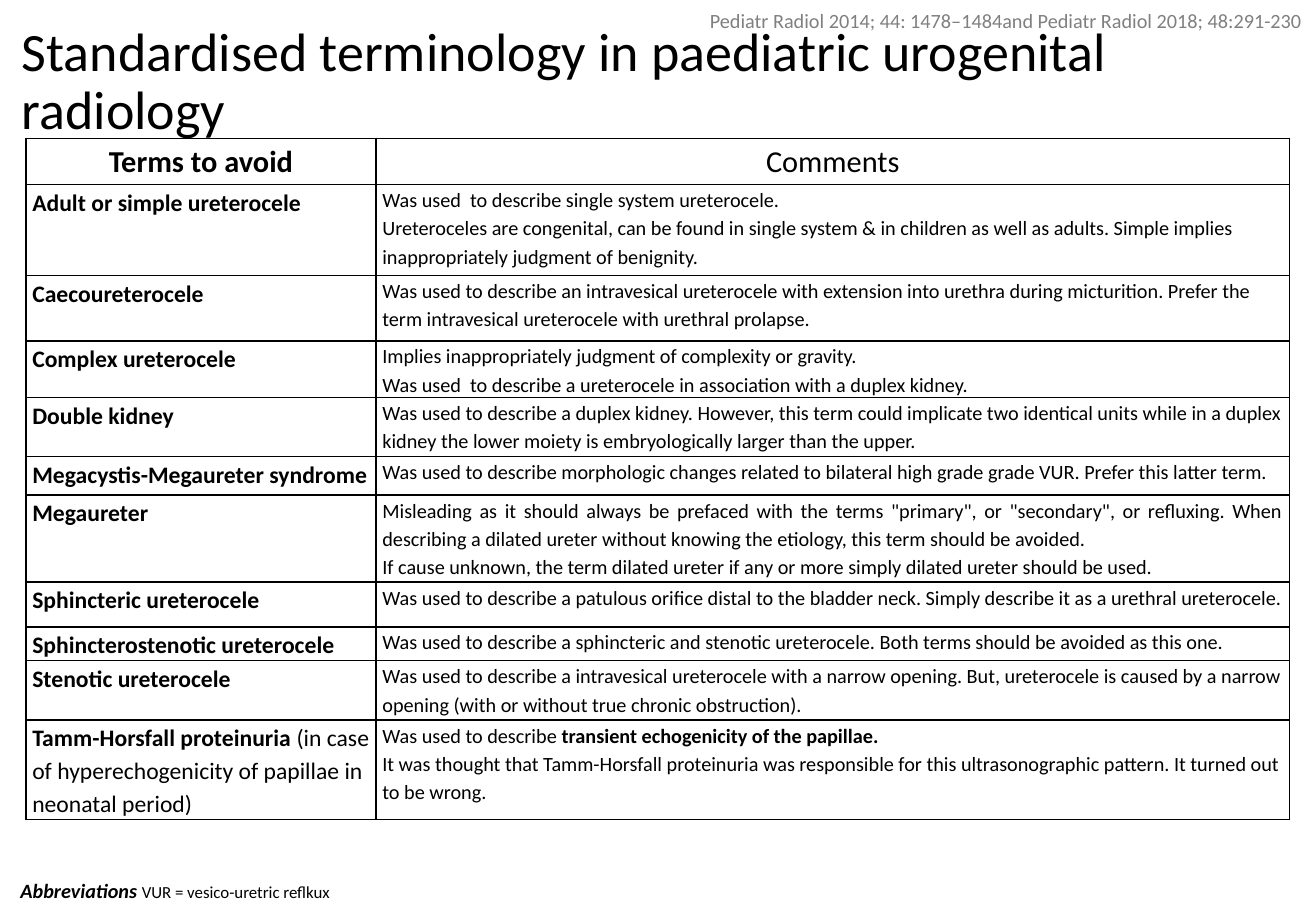
from pptx import Presentation
from pptx import util as u
from pptx.dml import color
from pptx.enum import text
from pptx.oxml import parse_xml
from pptx.oxml import ns

Pt = u.Pt
FACE = "Calibri"
BLACK, GREY = "000000", "808080"
ALIGN = text.PP_ALIGN
COLS = (207.5, 541.5)

# Each row: height, runs of the term, paragraphs of the comment.
# A run is plain text, or (text, style) with style "b" for bold.
ROWS = [
    (54, [("Adult or simple ureterocele", "b")], [
        ["Was used  to describe single system ureterocele."],
        ["Ureteroceles are congenital, can be found in single system & in children "
         "as well as adults. Simple implies inappropriately judgment of benignity."]]),
    (38.7, [("Caecoureterocele", "b")], [
        ["Was used to describe an intravesical ureterocele with extension into urethra "
         "during micturition. Prefer the term intravesical ureterocele with urethral "
         "prolapse."]]),
    (33.4, [("Complex ureterocele", "b")], [
        ["Implies inappropriately judgment of complexity or gravity."],
        ["Was used  to describe a ureterocele in association with a duplex kidney."]]),
    (34.8, [("Double kidney", "b")], [
        ["Was used to describe a duplex kidney. However, this term could implicate two "
         "identical units while in a duplex kidney the lower moiety is embryologically "
         "larger than the upper."]]),
    (23, [("Megacystis-Megaureter syndrome", "b")], [
        ["Was used to describe morphologic changes related to bilateral high grade "
         "grade VUR. Prefer this latter term."]]),
    (51.6, [("Megaureter", "b")], [
        ['Misleading as it should always be prefaced with the terms "primary", or '
         '"secondary", or refluxing. When describing a dilated ureter without knowing '
         "the etiology, this term should be avoided. "],
        ["If cause unknown, the term dilated ureter if any or more simply dilated "
         "ureter should be used."]]),
    (26.6, [("Sphincteric ureterocele", "b")], [
        ["Was used to describe a patulous orifice distal to the bladder neck. Simply "
         "describe it as a urethral ureterocele."]]),
    (20, [("Sphincterostenotic ureterocele", "b")], [
        ["Was used to describe a sphincteric and stenotic ureterocele. Both terms "
         "should be avoided as this one."]]),
    (35.2, [("Stenotic ureterocele", "b")], [
        ["Was used to describe a intravesical ureterocele with a narrow opening. But, "
         "ureterocele is caused by a narrow opening (with or without true chronic "
         "obstruction)."]]),
    (51, [("Tamm-Horsfall proteinuria ", "b"),
          "(in case of hyperechogenicity of papillae in neonatal period)"], [
        ["Was used to describe ", ("transient echogenicity of the papillae.", "b")],
        ["It was thought that Tamm-Horsfall proteinuria was responsible for this "
         "ultrasonographic pattern. It turned out to be wrong."]]),
]


def rgb(code):
    return color.RGBColor.from_string(code)


def write(para, runs, size, tint=BLACK, align=ALIGN.LEFT, lead=1.0):
    """Fill a paragraph; bold goes on the paragraph when all runs share it."""
    para.alignment, para.line_spacing = align, lead
    font = para.font
    font.name, font.size, font.color.rgb = FACE, Pt(size), rgb(tint)
    pairs = [(run, "") if isinstance(run, str) else run for run in runs]
    same = len({style for _, style in pairs}) == 1
    if same:
        font.bold = pairs[0][1] == "b"
    for words, style in pairs:
        run = para.add_run()
        run.text = words
        if not same:
            run.font.bold = "b" in style
            run.font.italic = "i" in style


def label(slide, box, runs, size, anchor=text.MSO_ANCHOR.TOP, **look):
    frame = slide.shapes.add_textbox(*map(Pt, box)).text_frame
    frame.word_wrap = True
    frame.vertical_anchor = anchor
    write(frame.paragraphs[0], runs, size, **look)
    return frame.paragraphs[0]


def border(cell):
    props = cell._tc.get_or_add_tcPr()
    for side in "LRTB":
        props.append(parse_xml(
            f'<a:ln{side} {ns.nsdecls("a")} w="{Pt(1)}"><a:solidFill>'
            f'<a:srgbClr val="{BLACK}"/></a:solidFill></a:ln{side}>'))


def fill(cell, paras, size, align=ALIGN.LEFT):
    """Write paragraphs into a cell and give it its margins and border."""
    cell.margin_left = cell.margin_right = Pt(3.75)
    cell.margin_top = cell.margin_bottom = 0
    border(cell)
    cell.fill.background()
    frame = cell.text_frame
    for i, runs in enumerate(paras):
        para = frame.add_paragraph() if i else frame.paragraphs[0]
        write(para, runs, size, align=align, lead=1.15)


def terms(slide):
    head = 27.4
    high = head + sum(row[0] for row in ROWS)
    grid = slide.shapes.add_table(
        len(ROWS) + 1, 2, Pt(15.4), Pt(82), Pt(sum(COLS)), Pt(high)).table
    grid.first_row = grid.horz_banding = False
    for col, wide in zip(grid.columns, COLS):
        col.width = Pt(wide)
    grid.rows[0].height = Pt(head)
    fill(grid.cell(0, 0), [[("Terms to avoid", "b")]], 18, ALIGN.CENTER)
    fill(grid.cell(0, 1), [["Comments"]], 18, ALIGN.CENTER)
    for i, (tall, term, notes) in enumerate(ROWS, 1):
        grid.rows[i].height = Pt(tall)
        fill(grid.cell(i, 0), [term], 14)
        fill(grid.cell(i, 1), notes, 12)
        if term[0][0] == "Megaureter":
            grid.cell(i, 1).text_frame.paragraphs[0].alignment = ALIGN.JUSTIFY


def main():
    deck = Presentation()
    deck.slide_width, deck.slide_height = Pt(780), Pt(540)
    slide = deck.slides.add_slide(deck.slide_layouts[6])
    terms(slide)
    label(slide, (367, 1.5, 412, 21.8),
          ["Pediatr Radiol 2014; 44: 1478–1484and Pediatr Radiol 2018; 48:291-230"],
          12, tint=GREY, align=ALIGN.RIGHT)
    foot = label(slide, (5, 517, 633, 21.8),
                 [("Abbreviations ", "bi"), "VUR = vesico-uretric reflkux"], 12)
    foot.runs[1].font.size = Pt(10)
    label(slide, (5.8, 18, 779, 62.6),
          ["Standardised terminology in paediatric urogenital radiology"],
          32, anchor=text.MSO_ANCHOR.MIDDLE, lead=0.9)
    deck.save("out.pptx")


if __name__ == "__main__":
    main()
